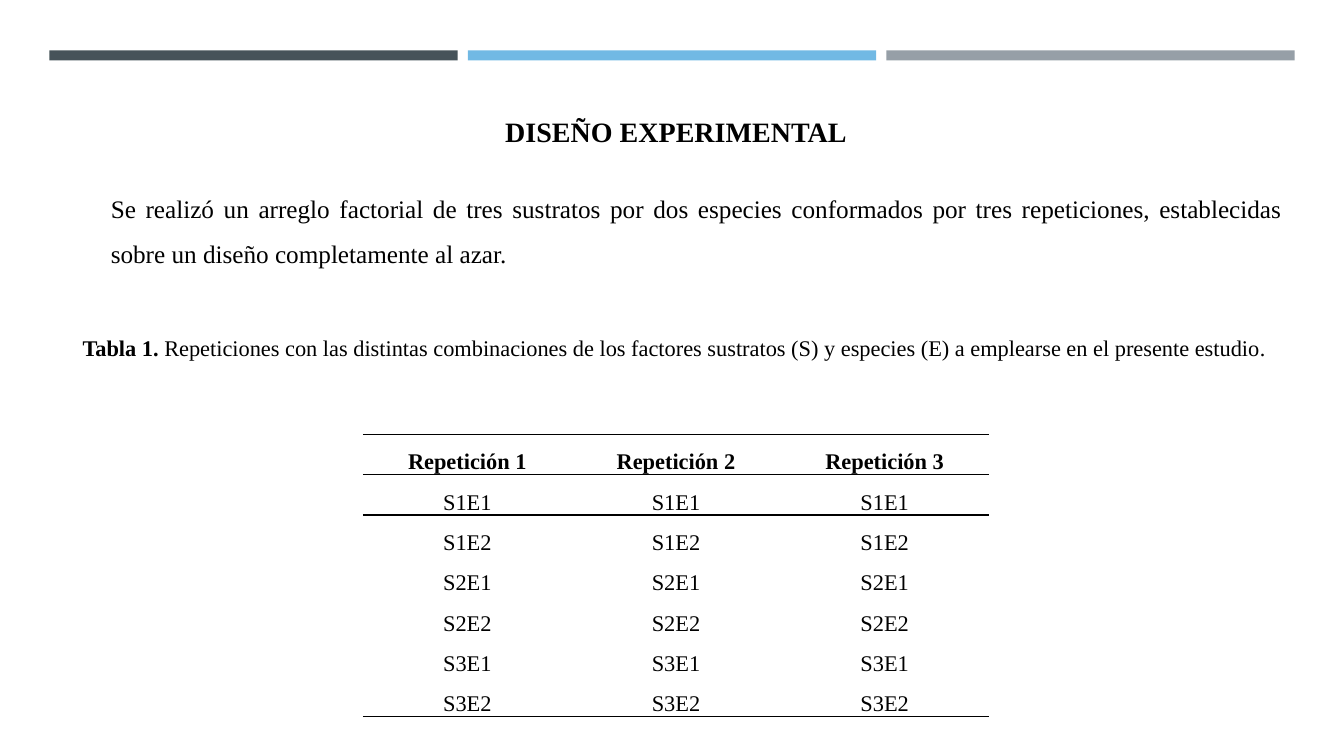
from dataclasses import dataclass

from lxml import etree
from pptx import Presentation
from pptx.dml.color import RGBColor
from pptx.enum.shapes import MSO_SHAPE
from pptx.enum.text import MSO_ANCHOR, MSO_AUTO_SIZE, PP_ALIGN
from pptx.oxml.ns import qn
from pptx.util import Inches, Pt

RECTANGLE = MSO_SHAPE.RECTANGLE
MIDDLE, BOTTOM = MSO_ANCHOR.MIDDLE, MSO_ANCHOR.BOTTOM
CENTER, JUSTIFY = PP_ALIGN.CENTER, PP_ALIGN.JUSTIFY
NO_AUTOFIT, GROW = MSO_AUTO_SIZE.NONE, MSO_AUTO_SIZE.SHAPE_TO_FIT_TEXT

FONT = "Times New Roman"
COLORS = {
    "text": "000000",
    "background": "FFFFFF",
    "dark_bar": "465359",
    "blue_bar": "71B9E4",
    "gray_bar": "969FA7",
}
BAR_LEFT, BAR_TOP, BAR_WIDTH, BAR_HEIGHT, BAR_STEP = 0.49, 0.5, 4.05, 0.1, 4.15
REPETITIONS = 3
SUBSTRATES = 3
SPECIES = 2
COLUMN_WIDTH, ROW_HEIGHT = 2.07, 0.4


@dataclass
class Span:
    text: str
    size: float
    bold: bool = False
    italic: bool = False


@dataclass
class Passage:
    left: float
    top: float
    width: float
    height: float
    spans: list[Span]
    space_before: float
    space_after: float


PASSAGES = [
    Passage(1, 1.72, 11.82, 0.96, [
        Span("Se realizó un arreglo factorial de tres sustratos por dos especies "
             "conformados por tres repeticiones, establecidas sobre un diseño "
             "completamente al azar.", 18),
    ], 18, 18),
    Passage(0.72, 3.13, 12.39, 0.46, [
        Span("Tabla 1. ", 16, bold=True),
        Span("Repeticiones con las distintas combinaciones de los factores sustratos (S) "
             "y especies (E) a emplearse en el presente estudio", 16),
        Span(".", 16, italic=True),
    ], 0, 12),
]


def color(name: str) -> RGBColor:
    return RGBColor.from_string(COLORS[name])


def write_spans(paragraph, spans: list[Span]) -> None:
    for span in spans:
        run = paragraph.add_run()
        run.text = span.text
        font = run.font
        font.name, font.size = FONT, Pt(span.size)
        font.bold, font.italic = span.bold, span.italic
        font.color.rgb = color("text")


def add_bars(slide) -> None:
    for index, name in enumerate(("dark_bar", "blue_bar", "gray_bar")):
        bar = slide.shapes.add_shape(
            RECTANGLE, Inches(BAR_LEFT + index * BAR_STEP), Inches(BAR_TOP),
            Inches(BAR_WIDTH), Inches(BAR_HEIGHT))
        bar.shadow.inherit = False
        bar.fill.solid()
        bar.fill.fore_color.rgb = color(name)
        bar.line.fill.background()


def fill_title(slide) -> None:
    title = slide.shapes.title
    title.left, title.top = Inches(4.16), Inches(1.15)
    title.width, title.height = Inches(5.09), Inches(0.31)
    frame = title.text_frame
    frame.auto_size = NO_AUTOFIT
    frame.vertical_anchor = MIDDLE
    heading = frame.paragraphs[0]
    heading.alignment = CENTER
    write_spans(heading, [Span("DISEÑO EXPERIMENTAL", 20, bold=True)])


def add_passage(slide, passage: Passage) -> None:
    box = slide.shapes.add_textbox(
        Inches(passage.left), Inches(passage.top),
        Inches(passage.width), Inches(passage.height))
    frame = box.text_frame
    frame.word_wrap = True
    frame.auto_size = GROW
    paragraph = frame.paragraphs[0]
    paragraph.alignment = JUSTIFY
    paragraph.line_spacing = 1.5
    paragraph.space_before = Pt(passage.space_before)
    paragraph.space_after = Pt(passage.space_after)
    write_spans(paragraph, passage.spans)


def set_borders(cell, top: bool, bottom: bool) -> None:
    """Rule the chosen horizontal edges and clear the others; call before filling."""
    properties = cell._tc.get_or_add_tcPr()
    for tag, ruled in (("lnL", False), ("lnR", False), ("lnT", top), ("lnB", bottom)):
        edge = etree.SubElement(properties, qn(f"a:{tag}"), w=str(Pt(1)))
        if ruled:
            fill = etree.SubElement(edge, qn("a:solidFill"))
            etree.SubElement(fill, qn("a:srgbClr"), val=COLORS["text"])
        else:
            etree.SubElement(edge, qn("a:noFill"))


def add_repetition_table(slide) -> None:
    header = [f"Repetición {number + 1}" for number in range(REPETITIONS)]
    treatments = [f"S{substrate + 1}E{species + 1}"
                  for substrate in range(SUBSTRATES) for species in range(SPECIES)]
    rows = [header] + [[treatment] * REPETITIONS for treatment in treatments]
    ruled_edges = {0, 1, 2, len(rows)}

    table = slide.shapes.add_table(
        len(rows), REPETITIONS, Inches(3.6), Inches(4.31),
        Inches(COLUMN_WIDTH * REPETITIONS), Inches(ROW_HEIGHT * len(rows))).table
    table.first_row = table.horz_banding = False
    for column in table.columns:
        column.width = Inches(COLUMN_WIDTH)
    for row_index, labels in enumerate(rows):
        table.rows[row_index].height = Inches(ROW_HEIGHT)
        for column_index, label in enumerate(labels):
            cell = table.cell(row_index, column_index)
            set_borders(cell, row_index in ruled_edges, row_index + 1 in ruled_edges)
            cell.fill.background()
            cell.vertical_anchor = BOTTOM
            cell.margin_left = cell.margin_right = Inches(0.05)
            cell.margin_top = cell.margin_bottom = 0
            paragraph = cell.text_frame.paragraphs[0]
            paragraph.alignment = CENTER
            paragraph.line_spacing = 1.5
            paragraph.space_after = Pt(12)
            write_spans(paragraph, [Span(label, 16, bold=row_index == 0)])


def main() -> None:
    presentation = Presentation()
    presentation.slide_width = Inches(13.33)
    presentation.slide_height = Inches(7.5)
    slide = presentation.slides.add_slide(presentation.slide_layouts.get_by_name("Title Only"))
    slide.background.fill.solid()
    slide.background.fill.fore_color.rgb = color("background")
    add_bars(slide)
    fill_title(slide)
    for passage in PASSAGES:
        add_passage(slide, passage)
    add_repetition_table(slide)
    presentation.save("out.pptx")


if __name__ == "__main__":
    main()
